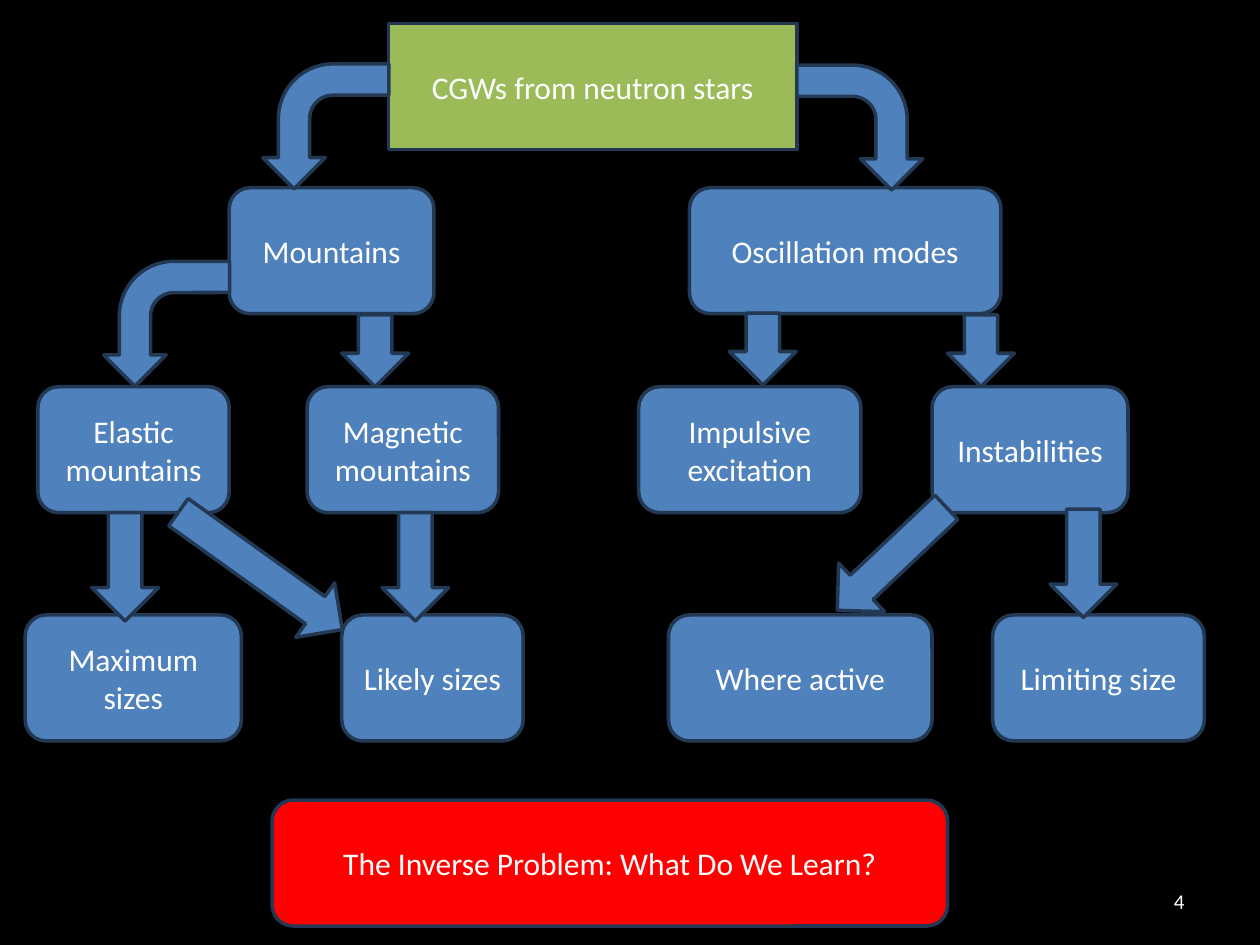
from dataclasses import dataclass

from pptx import Presentation
from pptx.dml.color import RGBColor
from pptx.enum.shapes import MSO_SHAPE
from pptx.enum.text import MSO_ANCHOR, PP_ALIGN
from pptx.shapes.autoshape import Shape
from pptx.slide import Slide
from pptx.util import Pt

BLACK, WHITE = "000000", "FFFFFF"
BLUE, GREEN, RED, OUTLINE = "4F81BD", "9BBB59", "FF0000", "233953"
FONT = "Calibri"
BOX_HEIGHT = 72
TOP_ROW, BRANCH_ROW, TYPE_ROW, DETAIL_ROW, BOTTOM_ROW = 13.5, 107.3, 221, 351.4, 457.2
BENT_WIDTH, BENT_HEIGHT = 71.4, 72
ARROW_WIDTH, SHORT, LONG = 38.2, 41, 61.9


@dataclass
class Box:
    text: str
    left: float
    top: float
    width: float
    fill: str = BLUE
    kind: MSO_SHAPE = MSO_SHAPE.ROUNDED_RECTANGLE


@dataclass
class Arrow:
    left: float
    top: float
    height: float
    width: float = ARROW_WIDTH
    rotation: float = 0
    flipped: bool = False
    kind: MSO_SHAPE = MSO_SHAPE.DOWN_ARROW


def color(value: str) -> RGBColor:
    return RGBColor.from_string(value)


def style_shape(shape: Shape, fill: str) -> None:
    shape.shadow.inherit = False
    shape.fill.solid()
    shape.fill.fore_color.rgb = color(fill)
    shape.line.color.rgb = color(OUTLINE)
    shape.line.width = Pt(2)


def write_text(shape: Shape, text: str, size: float, alignment: PP_ALIGN) -> None:
    frame = shape.text_frame
    frame.word_wrap = True
    frame.vertical_anchor = MSO_ANCHOR.MIDDLE
    para = frame.paragraphs[0]
    para.text = text
    para.alignment = alignment
    para.font.name = FONT
    para.font.size = Pt(size)
    para.font.color.rgb = color(WHITE)


def draw_box(page: Slide, box: Box) -> None:
    shape = page.shapes.add_shape(
        box.kind, Pt(box.left), Pt(box.top), Pt(box.width), Pt(BOX_HEIGHT))
    style_shape(shape, box.fill)
    write_text(shape, box.text, 18, PP_ALIGN.CENTER)


def draw_arrow(page: Slide, arrow: Arrow) -> None:
    shape = page.shapes.add_shape(
        arrow.kind, Pt(arrow.left), Pt(arrow.top), Pt(arrow.width), Pt(arrow.height))
    style_shape(shape, BLUE)
    shape.rotation = arrow.rotation
    if arrow.flipped:
        shape._element.spPr.xfrm.set("flipH", "1")


def bent_arrow(left: float, top: float, to_left: bool) -> Arrow:
    return Arrow(left, top, BENT_HEIGHT, BENT_WIDTH, 270 if to_left else 90,
                 to_left, MSO_SHAPE.BENT_ARROW)


BOXES = [
    Box("CGWs from neutron stars", 222, TOP_ROW, 233.4, GREEN, MSO_SHAPE.RECTANGLE),
    Box("Mountains", 131, BRANCH_ROW, 117),
    Box("Oscillation modes", 394, BRANCH_ROW, 178),
    Box("Elastic mountains", 21.6, TYPE_ROW, 109.4),
    Box("Magnetic mountains", 175.5, TYPE_ROW, 109.4),
    Box("Impulsive excitation", 365, TYPE_ROW, 127),
    Box("Instabilities", 532.6, TYPE_ROW, 112),
    Box("Maximum sizes", 14.4, DETAIL_ROW, 123.6),
    Box("Likely sizes", 195.3, DETAIL_ROW, 103.7),
    Box("Where active", 382, DETAIL_ROW, 150.6),
    Box("Limiting size", 567.2, DETAIL_ROW, 121),
    Box("The Inverse Problem: What Do We Learn?", 155.5, BOTTOM_ROW, 386, RED),
]

ARROWS = [
    # Root to branches, and mountains to elastic mountains
    bent_arrow(455.6, 36.9, False),
    bent_arrow(150.5, 36.2, True),
    bent_arrow(59.6, 149, True),
    # Branches to types
    Arrow(195.3, 180, SHORT),
    Arrow(541.5, 180, SHORT),
    Arrow(416.8, 179, SHORT),
    # Types to details
    Arrow(52.4, 293, LONG),
    Arrow(218.3, 293, LONG),
    Arrow(600, 291, LONG),
    Arrow(490.5, 276.5, 85.7, rotation=46.6),
    Arrow(129.7, 268.6, 115.2, rotation=305.6),
]


def main() -> None:
    deck = Presentation()
    deck.slide_width, deck.slide_height = Pt(720), Pt(540)
    page = deck.slides.add_slide(deck.slide_layouts[6])
    page.background.fill.solid()
    page.background.fill.fore_color.rgb = color(BLACK)

    # Page number
    number = page.shapes.add_textbox(Pt(516), Pt(500.5), Pt(168), Pt(28.8))
    write_text(number, "4", 12, PP_ALIGN.RIGHT)

    # Tree, with the arrows above the boxes
    for box in BOXES:
        draw_box(page, box)
    for arrow in ARROWS:
        draw_arrow(page, arrow)

    deck.save("out.pptx")


if __name__ == "__main__":
    main()
